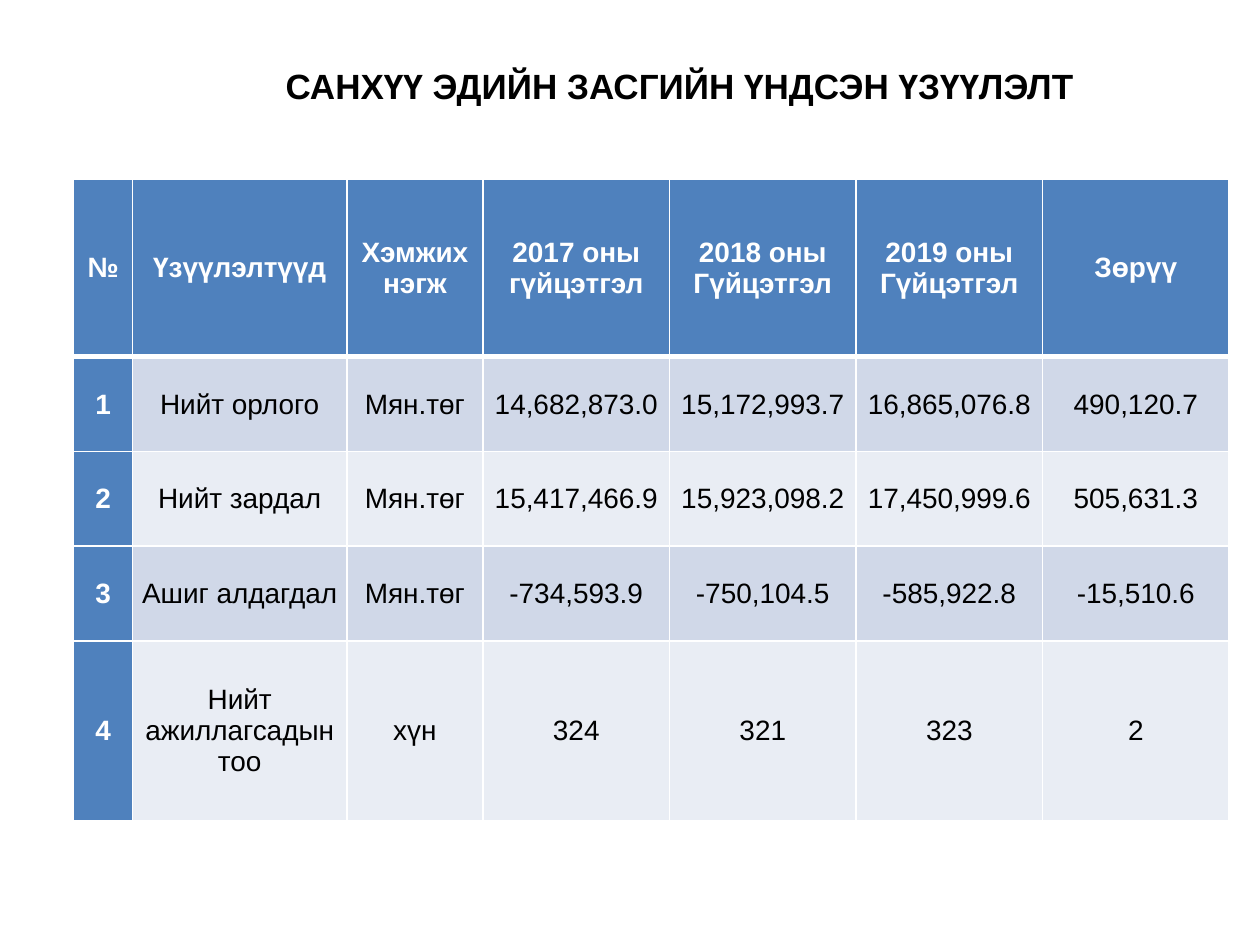
from pptx import Presentation
from pptx.dml.color import RGBColor
from pptx.enum.text import MSO_ANCHOR, PP_ALIGN
from pptx.oxml.ns import qn
from pptx.util import Pt
from lxml.etree import SubElement

# Content
TITLE = "САНХҮҮ ЭДИЙН ЗАСГИЙН ҮНДСЭН ҮЗҮҮЛЭЛТ"
ROWS = [
    ("№", "Үзүүлэлтүүд", "Хэмжих нэгж", "2017 оны гүйцэтгэл",
     "2018 оны Гүйцэтгэл", "2019 оны Гүйцэтгэл", "Зөрүү"),
    ("1", "Нийт орлого", "Мян.төг", "14,682,873.0", "15,172,993.7", "16,865,076.8", "490,120.7"),
    ("2", "Нийт зардал", "Мян.төг", "15,417,466.9", "15,923,098.2", "17,450,999.6", "505,631.3"),
    ("3", "Ашиг алдагдал", "Мян.төг", "-734,593.9", "-750,104.5", "-585,922.8", "-15,510.6"),
    ("4", "Нийт ажиллагсадын тоо", "хүн", "324", "321", "323", "2"),
]

THEME = {
    "font": "Arial", "title_size": 20, "table_size": 16,
    "text": "000000", "inverse": "FFFFFF", "border": "FFFFFF",
    "heading": "4F81BD", "bands": ("D0D8E8", "E9EDF4"),
}

# Layout, in points
TITLE_BOX = (80.6, 33.1, 579.6, 31.7)
TITLE_INDENT = 36
TABLE_LEFT, TABLE_TOP = 42, 102.2
COLUMN_WIDTHS = [33.8, 122.4, 77.8] + [106.6] * 4
ROW_HEIGHTS = [101.5] + [54.2] * 3 + [102.5]
CELL_FORMAT = {
    "margin_left": Pt(0.7), "margin_right": Pt(0.7), "margin_top": Pt(0.7),
    "margin_bottom": 0, "vertical_anchor": MSO_ANCHOR.MIDDLE,
}


def write(text_frame, text, size, color, bold):
    paragraph = text_frame.paragraphs[0]
    paragraph.alignment = PP_ALIGN.CENTER
    run = paragraph.add_run()
    run.text = text
    font_format = {"name": THEME["font"], "size": Pt(size), "bold": bold}
    for name, value in font_format.items():
        setattr(run.font, name, value)
    run.font.color.rgb = RGBColor.from_string(color)
    return paragraph


def add_borders(cell, widths):
    properties = cell._tc.get_or_add_tcPr()
    for side, width in widths.items():
        line = SubElement(properties, qn(f"a:ln{side}"), w=str(Pt(width)))
        fill = SubElement(line, qn("a:solidFill"))
        SubElement(fill, qn("a:srgbClr"), val=THEME["border"])


def add_title(slide):
    box = slide.shapes.add_textbox(*map(Pt, TITLE_BOX))
    box.text_frame.word_wrap = True
    box.text_frame.vertical_anchor = MSO_ANCHOR.MIDDLE
    paragraph = write(box.text_frame, TITLE, THEME["title_size"], THEME["text"], True)
    paragraph._p.get_or_add_pPr().set("indent", str(Pt(TITLE_INDENT)))


def add_indicator_table(slide):
    frame = slide.shapes.add_table(
        len(ROWS), len(COLUMN_WIDTHS), Pt(TABLE_LEFT), Pt(TABLE_TOP),
        Pt(sum(COLUMN_WIDTHS)), Pt(sum(ROW_HEIGHTS)))
    table = frame.table
    table.first_col = True
    for column, width in zip(table.columns, COLUMN_WIDTHS):
        column.width = Pt(width)
    for row, height in zip(table.rows, ROW_HEIGHTS):
        row.height = Pt(height)

    for row_index, values in enumerate(ROWS):
        for column_index, value in enumerate(values):
            cell = table.cell(row_index, column_index)
            for name, setting in CELL_FORMAT.items():
                setattr(cell, name, setting)
            # The header row is closed by a thick rule
            top = 3 if row_index == 1 else 1
            bottom = 3 if row_index == 0 else 1
            add_borders(cell, {"L": 1, "R": 1, "T": top, "B": bottom})
            # Header row and number column share one look; other rows are banded
            heading = row_index == 0 or column_index == 0
            fill = THEME["heading"] if heading else THEME["bands"][(row_index - 1) % 2]
            cell.fill.solid()
            cell.fill.fore_color.rgb = RGBColor.from_string(fill)
            color = THEME["inverse"] if heading else THEME["text"]
            write(cell.text_frame, value, THEME["table_size"], color, heading)


def main():
    presentation = Presentation()
    presentation.slide_width, presentation.slide_height = Pt(720), Pt(540)
    slide = presentation.slides.add_slide(presentation.slide_layouts[6])
    add_title(slide)
    add_indicator_table(slide)
    presentation.save("out.pptx")


if __name__ == "__main__":
    main()
